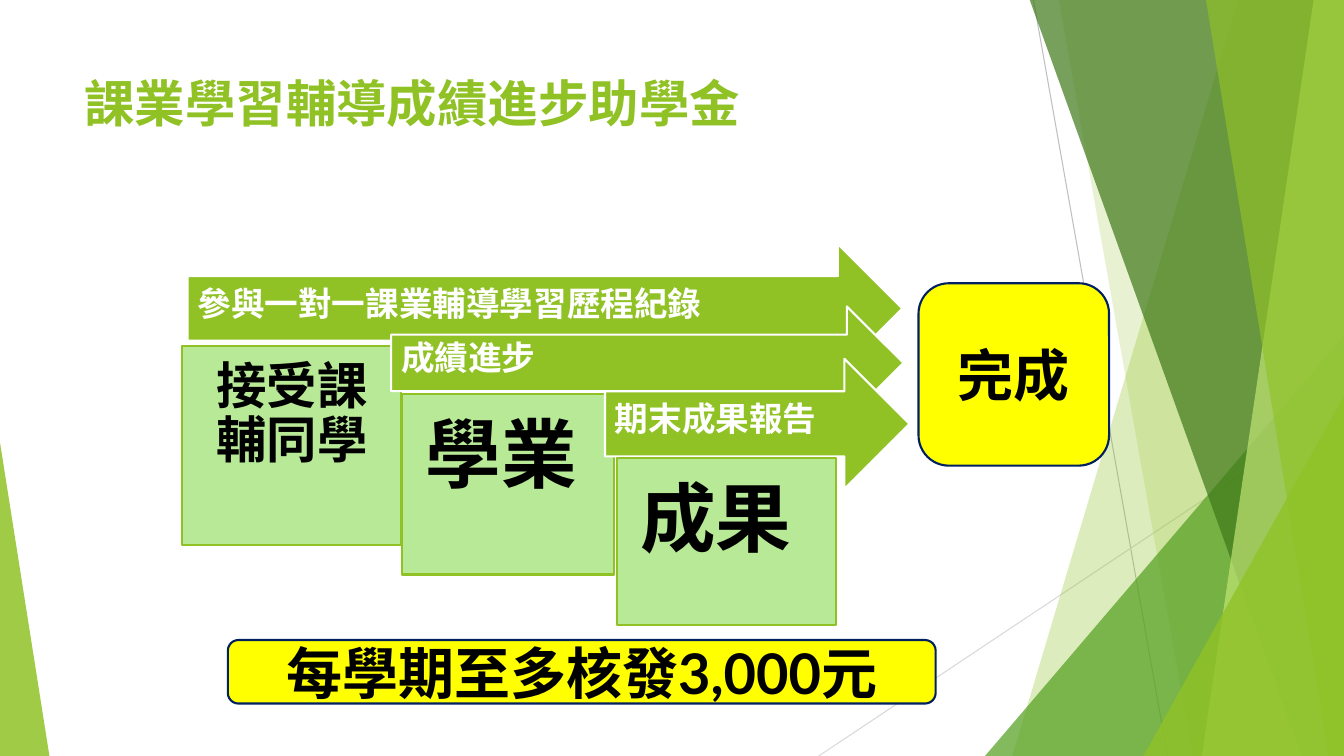
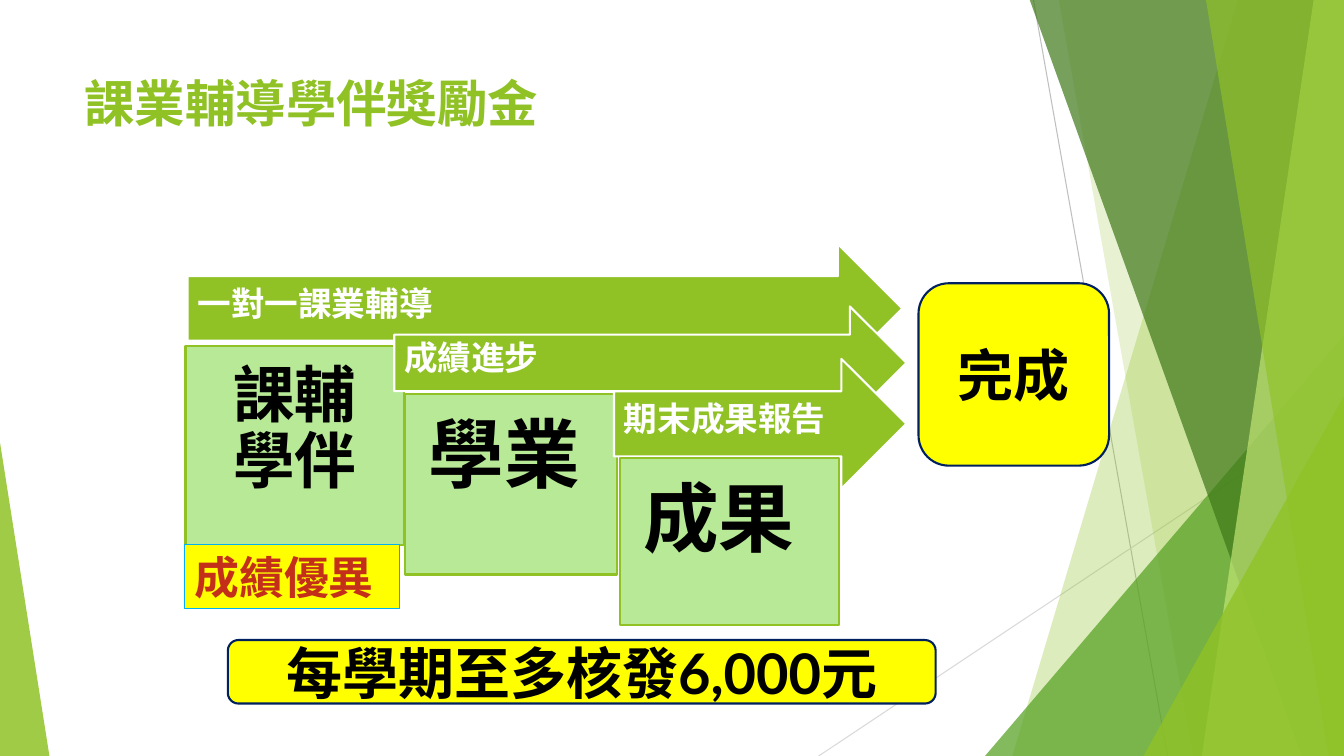
from lxml.etree import SubElement
from pptx import Presentation
from pptx.dml.color import RGBColor
from pptx.enum.shapes import MSO_CONNECTOR, MSO_SHAPE
from pptx.enum.text import MSO_ANCHOR, PP_ALIGN
from pptx.oxml.ns import qn
from pptx.util import Inches, Pt

FONT = "Lato"
GREEN, PALE_GREEN, YELLOW = "90C226", "B7E996", "FFFF00"
NAVY, WHITE, BLACK = "002060", "FFFFFF", "000000"
WIDTH, HEIGHT = 13.33, 7.5
BAND_TOP = -0.01


def paint(shape, fill, line=None, width=1.5, opacity=100):
    """Set a flat fill, with opacity in percent, and an optional outline."""
    shape.shadow.inherit = False
    shape.fill.solid()
    shape.fill.fore_color.rgb = RGBColor.from_string(fill)
    if opacity < 100:
        colour = shape.fill._xPr.find(qn("a:solidFill"))[0]
        SubElement(colour, qn("a:alpha"), val=str(opacity * 1000))
    if line:
        shape.line.color.rgb = RGBColor.from_string(line)
        shape.line.width = Pt(width)
    else:
        shape.line.fill.background()


def write(shape, text, size, color=BLACK, align=PP_ALIGN.LEFT, anchor=MSO_ANCHOR.TOP,
          insets=(0.1, 0.05, 0.1, 0.05), spacing=1.0):
    """Put bold text in a shape; insets run left, top, right, bottom."""
    frame = shape.text_frame
    frame.word_wrap = True
    frame.vertical_anchor = anchor
    frame.margin_left, frame.margin_top, frame.margin_right, frame.margin_bottom = map(Inches, insets)
    paragraph = frame.paragraphs[0]
    paragraph.alignment = align
    paragraph.line_spacing = spacing
    run = paragraph.add_run()
    run.text = text
    run.font.name = FONT
    run.font.size = Pt(size)
    run.font.bold = True
    run.font.color.rgb = RGBColor.from_string(color)


# Background: start x, start y, end x, end y, colour
background_lines = [
    (10.25, 0, 11.58, HEIGHT, "BFBFBF"),
    (WIDTH, 4.03, 8.12, HEIGHT, "D9D9D9"),
]
# A band is (top x, bottom x) and reaches the right edge;
# a triangle is (left, top, width, apex) and reaches the bottom edge.
facets = [
    ((12.28, 10.04), GREEN, 30),
    ((10.5, 11.83), GREEN, 20),
    ((9.77, 3.33, 3.56, 1), "54A021", 72),
    ((10.21, 12.91), "3F7819", 70),
    ((13.03, 11.92), "C0E474", 70),
    ((11.96, 13.18), GREEN, 65),
    ((11.34, 3.93, 1.99, 1), GREEN, 80),
    ((0, 4.39, 0.49, 0), GREEN, 85),
]

# Rows shared by both slides: arrow top, arrow height; box left, top, width, height
arrow_rows = [(2.42, 1.28), (3.04, 1.12), (3.56, 1.29)]
box_places = [(1.81, 3.43, 2.17, 1.98), (3.99, 3.91, 2.1, 1.79), (6.12, 4.54, 2.17, 1.66)]

slides = [
    {
        "title": "課業學習輔導成績進步助學金",
        "first_arrow": "參與一對一課業輔導學習歷程紀錄",
        "first_box": ("接受課輔同學", 36, 0.15),
        "box_shift": 0,
        "arrow_spans": [(1.86, 7.09), (3.88, 5.08), (6, 3.02)],
        "tag": None,
        "amount": "每學期至多核發3,000元",
    },
    {
        "title": "課業輔導學伴獎勵金",
        "first_arrow": "一對一課業輔導",
        "first_box": ("課輔學伴", 44, 0.18),
        "box_shift": 0.03,
        "arrow_spans": [(1.86, 7.09), (3.91, 5.08), (6.09, 2.9)],
        "tag": "成績優異",
        "amount": "每學期至多核發6,000元",
    },
]

presentation = Presentation()
presentation.slide_width = Inches(WIDTH)
presentation.slide_height = Inches(HEIGHT)

for content in slides:
    slide = presentation.slides.add_slide(presentation.slide_layouts[6])
    shapes = slide.shapes

    for *ends, color in background_lines:
        connector = shapes.add_connector(MSO_CONNECTOR.STRAIGHT, *map(Inches, ends))
        connector.line.color.rgb = RGBColor.from_string(color)
        connector.line.width = Pt(0.75)
        SubElement(connector._element.spPr, qn("a:effectLst"))

    for geometry, color, opacity in facets:
        if len(geometry) == 2:
            top_x, bottom_x = geometry
            builder = shapes.build_freeform(Inches(top_x), Inches(BAND_TOP))
            corners = [(WIDTH, BAND_TOP), (WIDTH, HEIGHT), (bottom_x, HEIGHT)]
            builder.add_line_segments([(Inches(x), Inches(y)) for x, y in corners])
            facet = builder.convert_to_shape()
        else:
            left, top, width, apex = geometry
            facet = shapes.add_shape(MSO_SHAPE.ISOSCELES_TRIANGLE, Inches(left), Inches(top),
                                     Inches(width), Inches(HEIGHT - top))
            facet.adjustments[0] = apex
        paint(facet, color, opacity=opacity)

    title = shapes.add_textbox(Inches(0.74), Inches(0.67), Inches(9.4), Inches(1.44))
    write(title, content["title"], 36, color=GREEN)

    arrow_texts = [content["first_arrow"], "成績進步", "期末成果報告"]
    box_texts = [content["first_box"], ("學業", 54, 0.23), ("成果", 54, 0.23)]
    steps = zip(arrow_texts, content["arrow_spans"], arrow_rows, box_texts, box_places)
    for index, (arrow_text, span, row, box_text, place) in enumerate(steps):
        (left, width), (top, height) = span, row
        arrow = shapes.add_shape(MSO_SHAPE.RIGHT_ARROW, Inches(left), Inches(top),
                                 Inches(width), Inches(height))
        paint(arrow, GREEN, line=WHITE)
        write(arrow, arrow_text, 24, color=WHITE, anchor=MSO_ANCHOR.MIDDLE,
              insets=(0.1, 0.1, 0.28, 0.16), spacing=0.9)

        left, top, width, height = place
        box = shapes.add_shape(MSO_SHAPE.RECTANGLE, Inches(left + content["box_shift"]),
                               Inches(top), Inches(width), Inches(height))
        paint(box, PALE_GREEN, line=GREEN)
        text, size, inset = box_text
        write(box, text, size, align=PP_ALIGN.LEFT if index else PP_ALIGN.CENTER,
              insets=(inset,) * 4, spacing=0.9)

    if content["tag"]:
        tag = shapes.add_shape(MSO_SHAPE.RECTANGLE, Inches(1.83), Inches(5.4),
                               Inches(2.13), Inches(0.64))
        paint(tag, YELLOW, line="00B0F0", width=0.75)
        write(tag, content["tag"], 32, color="C42F1A")

    results = [("完成", (9.11, 2.81, 1.89, 1.81)), (content["amount"], (2.26, 6.35, 7.02, 0.63))]
    for text, place in results:
        result = shapes.add_shape(MSO_SHAPE.ROUNDED_RECTANGLE, *map(Inches, place))
        paint(result, YELLOW, line=NAVY)
        write(result, text, 40, align=PP_ALIGN.CENTER, anchor=MSO_ANCHOR.MIDDLE)

presentation.save("out.pptx")
